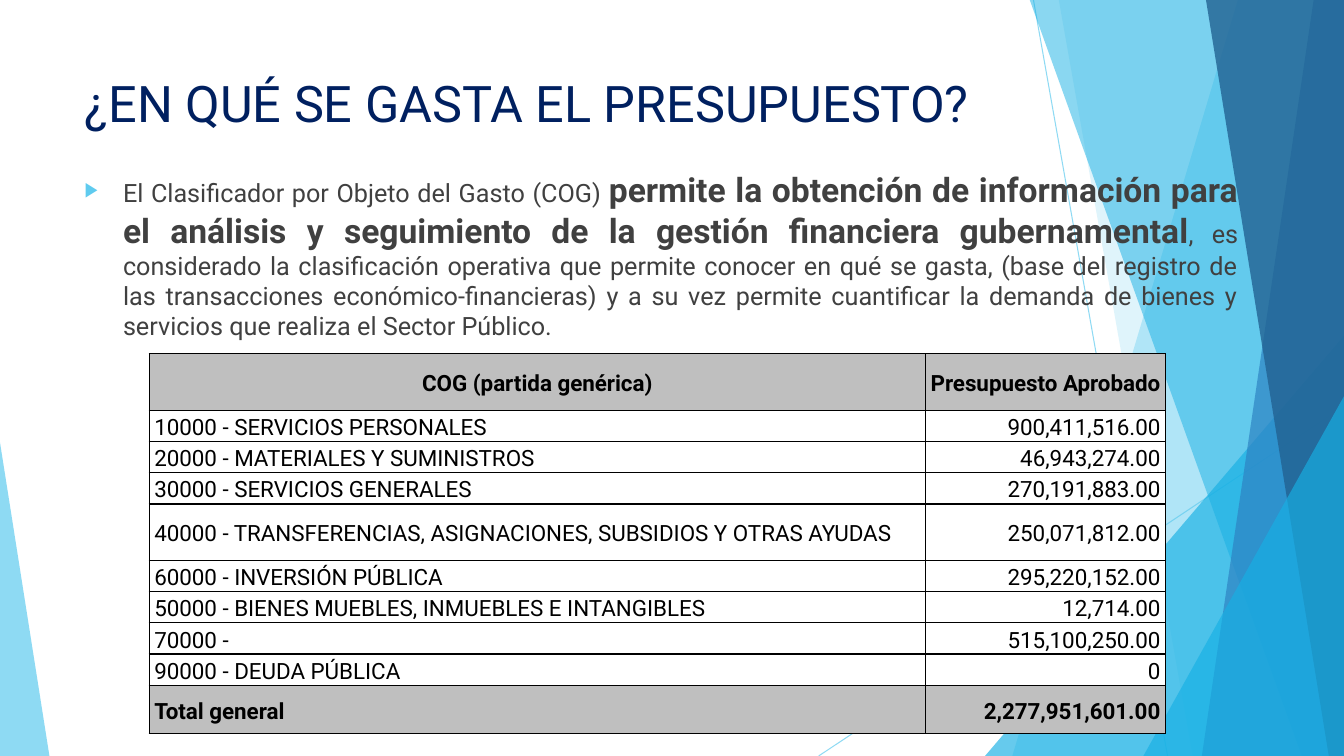
from lxml import etree
from pptx import Presentation
from pptx.dml.color import RGBColor
from pptx.enum.shapes import MSO_CONNECTOR, MSO_SHAPE
from pptx.enum.text import MSO_ANCHOR, MSO_AUTO_SIZE, PP_ALIGN
from pptx.oxml.ns import qn
from pptx.util import Pt

STRAIGHT = MSO_CONNECTOR.STRAIGHT
TRIANGLE = MSO_SHAPE.ISOSCELES_TRIANGLE
TOP, MIDDLE = MSO_ANCHOR.TOP, MSO_ANCHOR.MIDDLE
NO_AUTOFIT = MSO_AUTO_SIZE.NONE
LEFT, CENTER = PP_ALIGN.LEFT, PP_ALIGN.CENTER
RIGHT, JUSTIFY = PP_ALIGN.RIGHT, PP_ALIGN.JUSTIFY

EMU_PER_PX = 9144
WIDTH, HEIGHT = 1333, 750
SKY, CYAN, BLUE, DEEP = "5FCBEF", "17B0E4", "2E83C3", "226292"
NAVY, TEXT, BLACK, GRAY, WHITE = "002060", "404040", "000000", "BFBFBF", "FFFFFF"

TITLE = "¿EN QUÉ SE GASTA EL PRESUPUESTO?"
BODY = [
    ("El Clasificador por Objeto del Gasto (COG) ", 18, False),
    ("permite la obtención de información para el análisis y seguimiento "
     "de la gestión financiera gubernamental", 24, True),
    (", es considerado la clasificación operativa que permite conocer en qué "
     "se gasta, (base del registro de las transacciones económico-financieras) "
     "y a su vez permite cuantificar la demanda de bienes y servicios que "
     "realiza el Sector Público.", 18, False),
]
BUDGET = [
    ("COG (partida genérica)", "Presupuesto Aprobado", 56),
    ("10000 - SERVICIOS PERSONALES", "900,411,516.00", 31),
    ("20000 - MATERIALES Y SUMINISTROS", "46,943,274.00", 31),
    ("30000 - SERVICIOS GENERALES", "270,191,883.00", 31),
    ("40000 - TRANSFERENCIAS, ASIGNACIONES, SUBSIDIOS Y OTRAS AYUDAS",
     "250,071,812.00", 56),
    ("60000 - INVERSIÓN PÚBLICA", "295,220,152.00", 31),
    ("50000 - BIENES MUEBLES, INMUEBLES E INTANGIBLES", "12,714.00", 31),
    ("70000 -", "515,100,250.00", 31),
    ("90000 - DEUDA PÚBLICA", "0", 31),
    ("Total general", "2,277,951,601.00", 48),
]


def px(value):
    return value * EMU_PER_PX


def color(value):
    return RGBColor.from_string(value)


def add_xml(parent, tag, **attributes):
    return etree.SubElement(parent, qn(tag), attributes)


def set_opacity(fill_parent, percent):
    solid = next(fill_parent.iter(qn("a:solidFill")))
    add_xml(solid[0], "a:alpha", val=str(percent * 1000))


class SlideBuilder:
    font_name = "Roboto"

    def __init__(self, presentation):
        self.slide = presentation.slides.add_slide(presentation.slide_layouts[1])
        self.shapes = self.slide.shapes

    def style_font(self, font, size, hex_color, bold=False):
        font.name = self.font_name
        font.size = Pt(size)
        font.bold = bold
        font.color.rgb = color(hex_color)

    def line(self, x1, y1, x2, y2):
        connector = self.shapes.add_connector(STRAIGHT, px(x1), px(y1), px(x2), px(y2))
        connector.line.color.rgb = color(SKY)
        connector.line.width = Pt(0.75)
        properties = connector.element.spPr
        set_opacity(properties, 70)
        add_xml(properties, "a:effectLst")

    def paint(self, shape, hex_color, opacity):
        shape.shadow.inherit = False
        shape.fill.solid()
        shape.fill.fore_color.rgb = color(hex_color)
        shape.line.fill.background()
        set_opacity(shape.element.spPr, opacity)

    def band(self, top_x, bottom_x, hex_color, opacity):
        builder = self.shapes.build_freeform(top_x, -1, scale=EMU_PER_PX)
        builder.add_line_segments([(WIDTH, -1), (WIDTH, HEIGHT), (bottom_x, HEIGHT)])
        self.paint(builder.convert_to_shape(), hex_color, opacity)

    def triangle(self, left, top, width, apex, hex_color, opacity):
        shape = self.shapes.add_shape(
            TRIANGLE, px(left), px(top), px(width), px(HEIGHT - top))
        shape.adjustments[0] = apex
        self.paint(shape, hex_color, opacity)

    def place(self, placeholder, left, top, width, height):
        placeholder.left, placeholder.top = px(left), px(top)
        placeholder.width, placeholder.height = px(width), px(height)
        element = placeholder.element
        element.getparent().append(element)
        frame = placeholder.text_frame
        frame.auto_size = NO_AUTOFIT
        frame.word_wrap = True
        frame.vertical_anchor = TOP
        return frame.paragraphs[0]

    def title(self, text, *box):
        paragraph = self.place(self.shapes.title, *box)
        paragraph.text = text
        paragraph.alignment = LEFT
        self.style_font(paragraph.font, 36, NAVY)

    def body(self, runs, *box):
        paragraph = self.place(self.slide.placeholders[1], *box)
        paragraph.alignment = JUSTIFY
        paragraph.space_before = Pt(10)
        for text, size, bold in runs:
            run = paragraph.add_run()
            run.text = text
            self.style_font(run.font, size, TEXT, bold)
        properties = paragraph._p.get_or_add_pPr()
        properties.set("marL", str(px(38)))
        properties.set("indent", str(px(-38)))
        add_xml(add_xml(properties, "a:buClr"), "a:srgbClr", val=SKY)
        add_xml(properties, "a:buSzPct", val="80000")
        add_xml(properties, "a:buChar", char="▶")

    def cell(self, cell, text, alignment, emphasized):
        cell.text = text
        cell.vertical_anchor = MIDDLE
        cell.margin_left = cell.margin_right = px(5)
        cell.margin_top = cell.margin_bottom = 0
        paragraph = cell.text_frame.paragraphs[0]
        paragraph.alignment = alignment
        paragraph.line_spacing = 1.15
        self.style_font(paragraph.font, 16, BLACK, emphasized)
        properties = cell._tc.get_or_add_tcPr()
        for side in ("a:lnL", "a:lnR", "a:lnT", "a:lnB"):
            border = add_xml(properties, side, w=str(Pt(1)))
            add_xml(add_xml(border, "a:solidFill"), "a:srgbClr", val=BLACK)
        cell.fill.solid()
        cell.fill.fore_color.rgb = color(GRAY if emphasized else WHITE)

    def table(self, rows, left, top, column_widths):
        height = sum(row[-1] for row in rows)
        table = self.shapes.add_table(
            len(rows), len(column_widths), px(left), px(top),
            px(sum(column_widths)), px(height)).table
        for column, width in zip(table.columns, column_widths):
            column.width = px(width)
        for index, (concept, amount, row_height) in enumerate(rows):
            table.rows[index].height = px(row_height)
            emphasized = index in (0, len(rows) - 1)
            alignments = (LEFT, RIGHT) if index else (CENTER, CENTER)
            for column, text in enumerate((concept, amount)):
                self.cell(table.cell(index, column), text,
                          alignments[column], emphasized)


def main():
    presentation = Presentation()
    presentation.slide_width, presentation.slide_height = px(WIDTH), px(HEIGHT)
    builder = SlideBuilder(presentation)

    builder.line(1025, 0, 1158, HEIGHT)
    builder.line(WIDTH, 403, 812, HEIGHT)
    builder.band(1228, 1004, SKY, 36)
    builder.band(1050, 1183, SKY, 20)
    builder.triangle(977, 333, 356, 1, CYAN, 66)
    builder.band(1021, 1291, CYAN, 50)
    builder.band(1303, 1192, BLUE, 70)
    builder.band(1196, 1318, DEEP, 80)
    builder.triangle(1134, 393, 199, 1, CYAN, 66)
    builder.triangle(0, 439, 49, 0, SKY, 70)

    builder.title(TITLE, 74, 67, 940, 144)
    builder.body(BODY, 74, 163, 1164, 424)
    builder.table(BUDGET, 148, 351, (770, 238))
    presentation.save("out.pptx")


if __name__ == "__main__":
    main()
